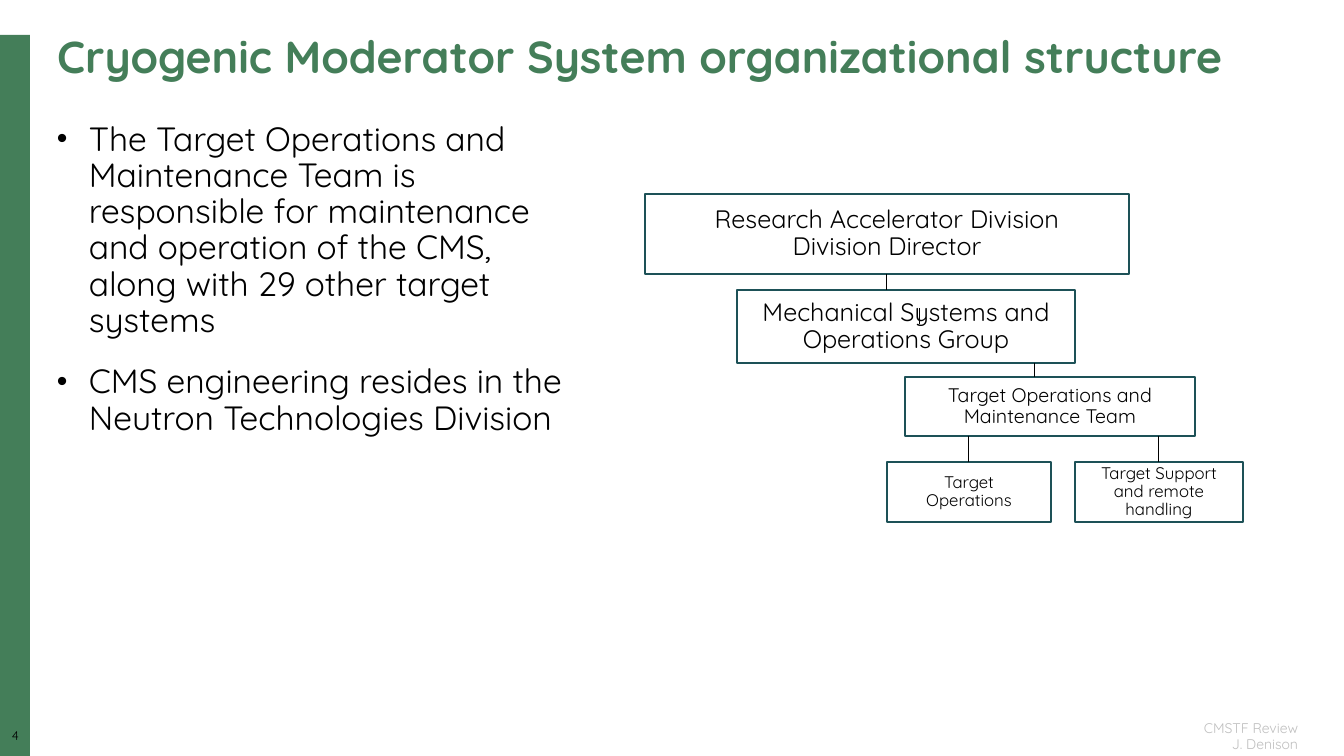
"""Build the Cryogenic Moderator System organization slide."""
from lxml import etree
from pptx import Presentation
from pptx import util as u
from pptx.dml.color import RGBColor
from pptx.enum import shapes, text
from pptx.oxml.ns import qn

SCALE = 914400 / 100.8
FONT = "Quicksand"
GREEN, TEAL, BLACK, WHITE, GRAY = "447E59", "1D5157", "000000", "FFFFFF", "BFBFBF"
ALIGN, ANCHOR = text.PP_ALIGN, text.MSO_ANCHOR

TITLE = "Cryogenic Moderator System organizational structure"
POINTS = [
    "The Target Operations and Maintenance Team is responsible for maintenance "
    "and operation of the CMS, along with 29 other target systems",
    "CMS engineering resides in the Neutron Technologies Division",
]
FOOTER = ["CMSTF Review", "J. Denison"]
UNITS = {
    "director": ((645, 194, 484, 80), 18,
                 ["Research Accelerator Division", "Division Director"]),
    "group": ((737, 290, 338, 73), 18, ["Mechanical Systems and Operations Group"]),
    "team": ((905, 377, 290, 59), 14, ["Target Operations and Maintenance Team"]),
    "ops": ((887, 462, 164, 60), 12, ["Target Operations"]),
    "support": ((1075, 462, 168, 60), 12, ["Target Support and remote handling"]),
}
LINKS = [
    (887, 274, 290, "director", None),
    (920, 308, 324, None, None),
    (969, 436, 462, None, "ops"),
    (1035, 363, 377, None, None),
    (1159, 436, 462, None, "support"),
]


def px(*nums):
    return [u.Emu(round(n * SCALE)) for n in nums]


def color(code):
    return RGBColor.from_string(code)


def write(frame, lines, size, tint, align, anchor=ANCHOR.TOP, inset=None,
          space=0.9, gap=0, bullet=0, bold=False):
    frame.word_wrap = True
    frame.auto_size = text.MSO_AUTO_SIZE.NONE
    frame.vertical_anchor = anchor
    if inset is not None:
        frame.margin_left = frame.margin_right = px(inset)[0]
        frame.margin_top = frame.margin_bottom = px(inset)[0]
    for i, line in enumerate(lines):
        para = frame.add_paragraph() if i else frame.paragraphs[0]
        para.alignment, para.line_spacing = align, space
        if i and gap:
            para.space_before = u.Pt(gap)
        if bullet:
            mark(para, bullet)
        run = para.add_run()
        run.text = line
        font = run.font
        font.name, font.size, font.bold = FONT, u.Pt(size), bold
        font.color.rgb = color(tint)


def mark(para, indent):
    props = para._p.get_or_add_pPr()
    left = px(indent)[0]
    props.set("marL", str(left))
    props.set("indent", str(-left))
    tint = etree.SubElement(props, qn("a:buClr"))
    etree.SubElement(tint, qn("a:srgbClr"), val=BLACK)
    etree.SubElement(props, qn("a:buSzPct"), val="90000")
    etree.SubElement(props, qn("a:buFont"), typeface="Arial")
    etree.SubElement(props, qn("a:buChar"), char="•")


def block(slide, box, fill, line=None):
    shape = slide.shapes.add_shape(shapes.MSO_SHAPE.RECTANGLE, *px(*box))
    shape.shadow.inherit = False
    shape.fill.solid()
    shape.fill.fore_color.rgb = color(fill)
    if line:
        shape.line.color.rgb = color(line)
        shape.line.width = u.Pt(1.5)
    else:
        shape.line.fill.background()
    return shape


def link(slide, x, top, end, above, below):
    line = slide.shapes.add_connector(
        shapes.MSO_CONNECTOR.STRAIGHT, *px(x, top, x, end))
    line.line.color.rgb = color(BLACK)
    line.line.width = u.Pt(0.75)
    etree.SubElement(line._element.spPr, qn("a:effectLst"))
    if above:
        line.begin_connect(above, 2)
    if below:
        line.end_connect(below, 0)


def main():
    deck = Presentation()
    deck.slide_width, deck.slide_height = px(1344, 756)
    slide = deck.slides.add_slide(deck.slide_layouts[5])

    def label(box, *args, **opts):
        write(slide.shapes.add_textbox(*px(*box)).text_frame, *args, **opts)

    title = slide.shapes.title
    title.left, title.top, title.width, title.height = px(47, 30, 1260, 59)
    write(title.text_frame, [TITLE], 32, GREEN, ALIGN.LEFT, bold=True)

    block(slide, (0, 35, 30, 721), GREEN)
    label((0, 730, 31, 17), ["4"], 9, BLACK, ALIGN.CENTER, inset=0)
    label((883, 726, 425, 20), FOOTER, 10, GRAY, ALIGN.RIGHT, ANCHOR.MIDDLE, space=1.0)
    label((47, 117, 529, 560), POINTS, 24, BLACK, ALIGN.LEFT, gap=18, bullet=32)

    units = {}
    for name, (box, size, lines) in UNITS.items():
        units[name] = block(slide, box, WHITE, TEAL)
        write(units[name].text_frame, lines, size, BLACK, ALIGN.CENTER,
              ANCHOR.MIDDLE, inset=20)
    for x, top, end, above, below in LINKS:
        link(slide, x, top, end, units.get(above), units.get(below))

    deck.save("out.pptx")


if __name__ == "__main__":
    main()
